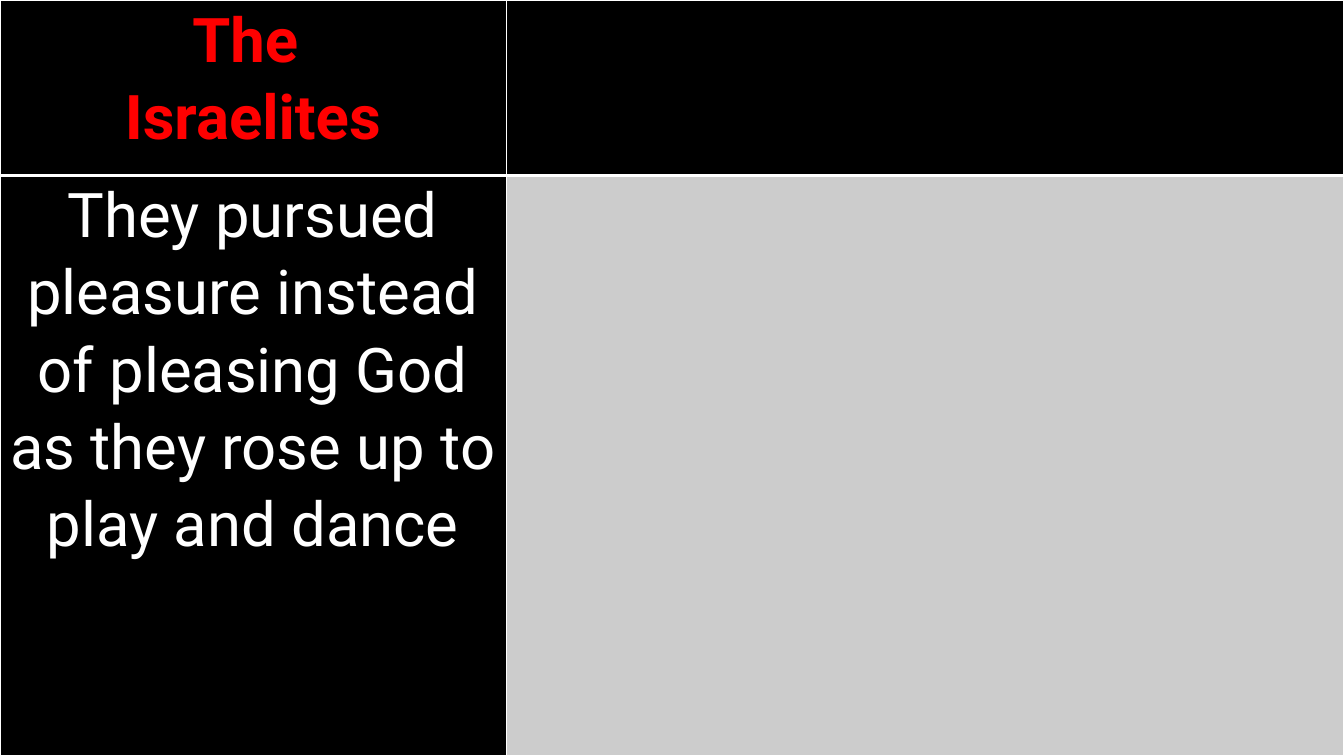
from lxml.etree import SubElement as Sub
from pptx import Presentation
from pptx.dml.color import RGBColor
from pptx.enum.text import PP_ALIGN as Align
from pptx.oxml.ns import qn
from pptx.util import Inches, Pt

BLACK, WHITE, RED, GREY = "000000", "FFFFFF", "FF0000", "CCCCCC"


def paint(fill, tone):
    fill.solid()
    fill.fore_color.rgb = RGBColor.from_string(tone)


def edge(cell, base):
    props = cell._tc.get_or_add_tcPr()
    for side in "LRTB":
        width = base if side == "B" else 1
        line = Sub(props, qn(f"a:ln{side}"), w=str(Pt(width)))
        Sub(Sub(line, qn("a:solidFill")), qn("a:srgbClr"), val=WHITE)


def write(cell, lines, tone, bold):
    cell.text = "\n".join(lines)
    for para in cell.text_frame.paragraphs:
        para.alignment = Align.CENTER
        para.line_spacing = 1.07
        font = para.font
        font.name, font.size, font.bold = "Roboto", Pt(44), bold
        paint(font.fill, tone)


def add_grid(slide, left, top, width, height):
    box = [Inches(v) for v in (left, top, width, height)]
    grid = slide.shapes.add_table(2, 2, *box).table
    first, head = 5.02, 1.74
    for col, size in zip(grid.columns, (first, width - first)):
        col.width = Inches(size)
    for row, size in zip(grid.rows, (head, height - head)):
        row.height = Inches(size)

    fills = (BLACK, BLACK), (BLACK, GREY)
    for row, tones, base in zip(grid.rows, fills, (3, 1)):
        for cell, tone in zip(row.cells, tones):
            cell.margin_left = cell.margin_right = Inches(0.07)
            cell.margin_top = cell.margin_bottom = 0
            edge(cell, base)
            paint(cell.fill, tone)

    write(grid.cell(0, 0), ["The ", "Israelites"], RED, True)
    write(grid.cell(1, 0), [
        "They pursued pleasure instead of pleasing God "
        "as they rose up to play and dance"
    ], WHITE, False)


def main():
    deck = Presentation()
    deck.slide_width, deck.slide_height = Inches(13.33), Inches(7.5)
    slide = deck.slides.add_slide(deck.slide_layouts[6])
    paint(slide.background.fill, BLACK)
    add_grid(slide, 0, 0, 13.33, 7.5)
    deck.save("out.pptx")


if __name__ == "__main__":
    main()
